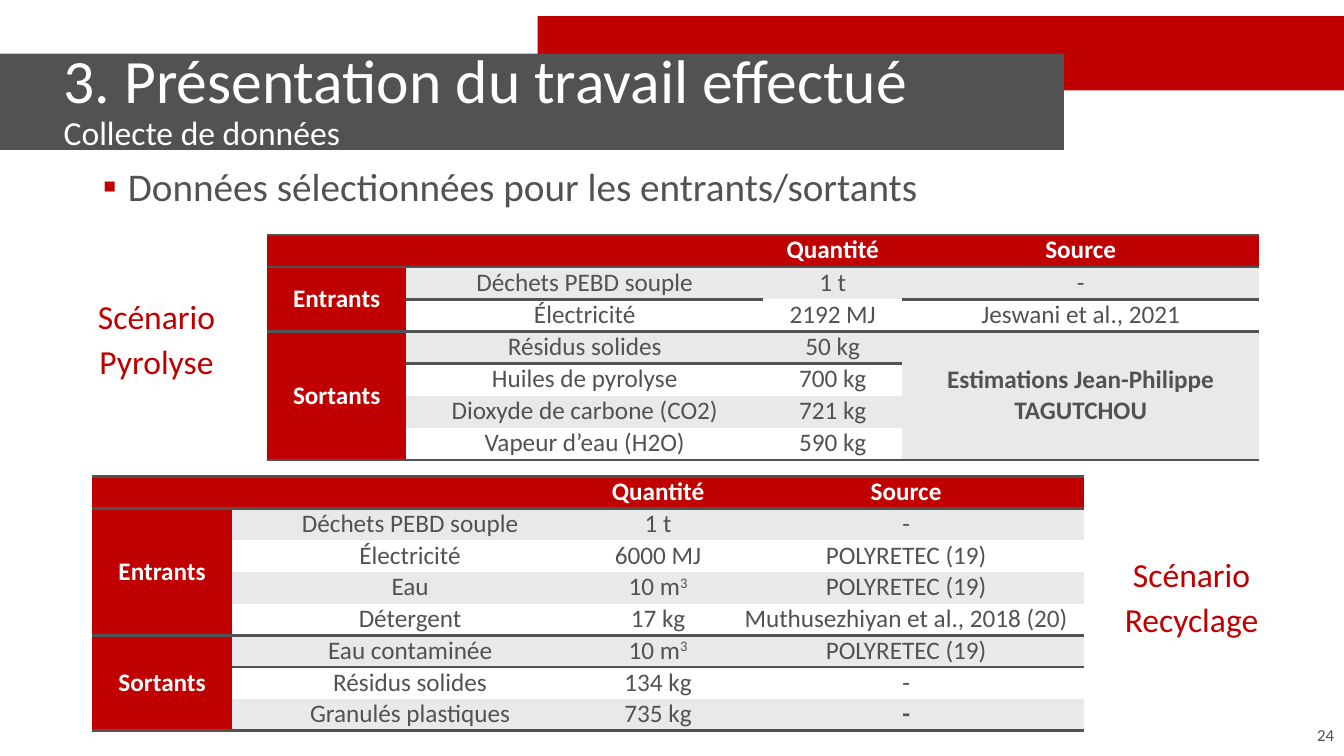
from lxml import etree
from pptx import Presentation
from pptx.dml.color import RGBColor
from pptx.enum.shapes import MSO_SHAPE
from pptx.enum.text import MSO_ANCHOR, MSO_AUTO_SIZE, PP_ALIGN
from pptx.oxml.ns import qn
from pptx.util import Cm, Pt

RECTANGLE = MSO_SHAPE.RECTANGLE
TOP, MIDDLE = MSO_ANCHOR.TOP, MSO_ANCHOR.MIDDLE
LEFT, CENTER, RIGHT = PP_ALIGN.LEFT, PP_ALIGN.CENTER, PP_ALIGN.RIGHT
NO_FIT = MSO_AUTO_SIZE.NONE

FONT = "Calibri"
COLORS = {"red": "C00000", "grey": "525252", "band": "E9E9E9", "white": "FFFFFF"}
PLAIN_STYLE = "{2D5ABB26-0587-4C30-8999-92F81FD0307C}"
COLUMN_WIDTHS = (3.51, 8.99, 3.51, 8.99)
OUTER_LINE, INNER_LINE = 2, 2.25
HEADER = ("", "", "Quantité", "Source")

PYROLYSIS = {
    "rows": [
        HEADER,
        ("Entrants", "Déchets PEBD souple", "1 t", "-"),
        ("", "Électricité", "2192 MJ", "Jeswani et al., 2021"),
        ("Sortants", "Résidus solides", "50 kg", "Estimations Jean-Philippe TAGUTCHOU"),
        ("", "Huiles de pyrolyse", "700 kg", ""),
        ("", "Dioxyde de carbone (CO2)", "721 kg", ""),
        ("", "Vapeur d’eau (H2O)", "590 kg", ""),
    ],
    "merges": [(1, 2, 0), (3, 6, 0), (3, 6, 3)],
    "lines": {0: (0, 1, 2, 3), 1: (1, 3), 2: (0, 1, 2, 3), 3: (1, 2)},
    "bold": (3, 3),
}
RECYCLING = {
    "rows": [
        HEADER,
        ("Entrants", "Déchets PEBD souple", "1 t", "-"),
        ("", "Électricité", "6000 MJ", "POLYRETEC (19)"),
        ("", "Eau", "10 m^3", "POLYRETEC (19)"),
        ("", "Détergent", "17 kg", "Muthusezhiyan et al., 2018 (20)"),
        ("Sortants", "Eau contaminée", "10 m^3", "POLYRETEC (19)"),
        ("", "Résidus solides", "134 kg", "-"),
        ("", "Granulés plastiques", "735 kg", "-"),
    ],
    "merges": [(1, 4, 0), (5, 7, 0)],
    "lines": {0: (0, 1, 2, 3), 4: (0, 1, 2, 3), 5: (1, 2, 3)},
    "bold": (7, 3),
}


def apply(target, values):
    for name, value in values.items():
        setattr(target, name, value)


def color(name):
    return RGBColor.from_string(COLORS[name])


def style_font(font, size, tint, bold=False):
    apply(font, {"name": FONT, "size": Pt(size), "bold": bold})
    font.color.rgb = color(tint)


def place(shape, left, top, width, height):
    apply(shape, {"left": Cm(left), "top": Cm(top), "width": Cm(width), "height": Cm(height)})


def add_bar(page, area, tint):
    bar = page.shapes.add_shape(RECTANGLE, *map(Cm, area))
    bar.shadow.inherit = False
    bar.fill.solid()
    bar.fill.fore_color.rgb = color(tint)
    bar.line.fill.background()
    page.shapes.title.element.addprevious(bar.element)


def fill_title(title, heading, subheading):
    place(title, 1.35, 0.89, 25.47, 3.35)
    apply(title.text_frame, {"word_wrap": True, "auto_size": NO_FIT, "vertical_anchor": MIDDLE})
    para = title.text_frame.paragraphs[0]
    apply(para, {"alignment": LEFT, "line_spacing": 0.9})
    for text, size in ((heading, 44), (subheading, 24)):
        span = para.add_run()
        span.text = text
        style_font(span.font, size, "white")
        if text == heading:
            para.add_line_break()


def fill_body(body, text):
    place(body, 2.34, 4.09, 29.21, 1.4)
    apply(body.text_frame, {"word_wrap": True, "auto_size": NO_FIT, "vertical_anchor": TOP})
    para = body.text_frame.paragraphs[0]
    para.text = text
    apply(para, {"alignment": LEFT, "line_spacing": 0.9, "space_before": Pt(0)})
    properties = para._p.get_or_add_pPr()
    properties.set("marL", str(Cm(0.63)))
    properties.set("indent", str(Cm(-0.63)))
    bullet_color = etree.SubElement(properties, qn("a:buClr"))
    etree.SubElement(bullet_color, qn("a:srgbClr"), val=COLORS["red"])
    etree.SubElement(properties, qn("a:buFont"), typeface="Wingdings")
    properties[-1].set("typeface", FONT)
    etree.SubElement(properties, qn("a:buChar"), char="▪")
    style_font(para.font, 28, "grey")


def add_text(page, area, lines, size, tint, alignment, anchor=TOP):
    box = page.shapes.add_textbox(*map(Cm, area))
    frame = box.text_frame
    apply(frame, {"word_wrap": True, "vertical_anchor": anchor})
    for index, (text, spacing) in enumerate(lines):
        para = frame.add_paragraph() if index else frame.paragraphs[0]
        para.text = text
        apply(para, {"alignment": alignment, "line_spacing": spacing})
        style_font(para.font, size, tint)


def add_border(cell, side, width):
    properties = cell._tc.get_or_add_tcPr()
    line = etree.SubElement(properties, qn("a:" + side), w=str(Pt(width)))
    fill = etree.SubElement(line, qn("a:solidFill"))
    etree.SubElement(fill, qn("a:srgbClr"), val=COLORS["grey"])


def fill_cell(cell, text, fill, tint, bold, anchor):
    cell.fill.solid()
    cell.fill.fore_color.rgb = color(fill)
    apply(cell, {"margin_left": Cm(0.18), "margin_right": Cm(0.18), "margin_top": 0,
                 "margin_bottom": 0, "vertical_anchor": anchor})
    para = cell.text_frame.paragraphs[0]
    para.alignment = CENTER
    style_font(para.font, 18, tint, bold)
    for index, part in enumerate(text.split("^") if text else ()):
        span = para.add_run()
        span.text = part
        style_font(span.font, 18, tint, bold)
        if index:
            span._r.get_or_add_rPr().set("baseline", "30000")


def add_scenario_table(page, left, top, row_height, scenario):
    rows = scenario["rows"]
    last_row = len(rows) - 1
    frame = page.shapes.add_table(len(rows), len(HEADER), Cm(left), Cm(top),
                                  Cm(sum(COLUMN_WIDTHS)), Cm(row_height * len(rows)))
    table = frame.table
    apply(table, {"first_row": False, "horz_banding": False})
    table._tbl.tblPr.find(qn("a:tableStyleId")).text = PLAIN_STYLE
    for column, width in zip(table.columns, COLUMN_WIDTHS):
        column.width = Cm(width)
    for row in table.rows:
        row.height = Cm(row_height)
    merge_ends = {}
    for first, last, column in scenario["merges"]:
        table.cell(first, column).merge(table.cell(last, column))
        merge_ends[first, column] = last
    for row, texts in enumerate(rows):
        for column, text in enumerate(texts):
            cell = table.cell(row, column)
            end = merge_ends.get((row, column), row)
            if row == 0:
                add_border(cell, "lnT", OUTER_LINE)
            if end == last_row:
                add_border(cell, "lnB", OUTER_LINE)
            elif column in scenario["lines"].get(end, ()):
                add_border(cell, "lnB", INNER_LINE)
            heading = row == 0 or column == 0
            fill = "red" if heading else "band" if row % 2 else "white"
            tint = "white" if heading else "grey"
            anchor = MIDDLE if (row, column) in merge_ends else TOP
            fill_cell(cell, text, fill, tint, heading or (row, column) == scenario["bold"], anchor)


def main():
    deck = Presentation()
    apply(deck, {"slide_width": Cm(33.87), "slide_height": Cm(19.05)})
    page = deck.slides.add_slide(deck.slide_layouts[1])
    add_bar(page, (13.55, 0.41, 20.32, 1.87), "red")
    add_bar(page, (0, 1.35, 26.81, 2.43), "grey")
    fill_title(page.shapes.title, "3. Présentation du travail effectué", "Collecte de données")
    fill_body(page.placeholders[1], "Données sélectionnées pour les entrants/sortants")
    add_text(page, (26.25, 18.01, 7.62, 1.01), [("24", 1.0)], 12, "grey", RIGHT, MIDDLE)
    add_text(page, (2.13, 7.44, 3.63, 2.06), [("Scénario", 0.9), ("Pyrolyse", 1.1)],
             24, "red", CENTER)
    add_scenario_table(page, 6.73, 5.92, 0.81, PYROLYSIS)
    add_scenario_table(page, 2.33, 12.01, 0.8, RECYCLING)
    add_text(page, (28, 13.95, 4.06, 2.06), [("Scénario", 0.9), ("Recyclage", 1.1)],
             24, "red", CENTER)
    deck.save("out.pptx")


if __name__ == "__main__":
    main()
